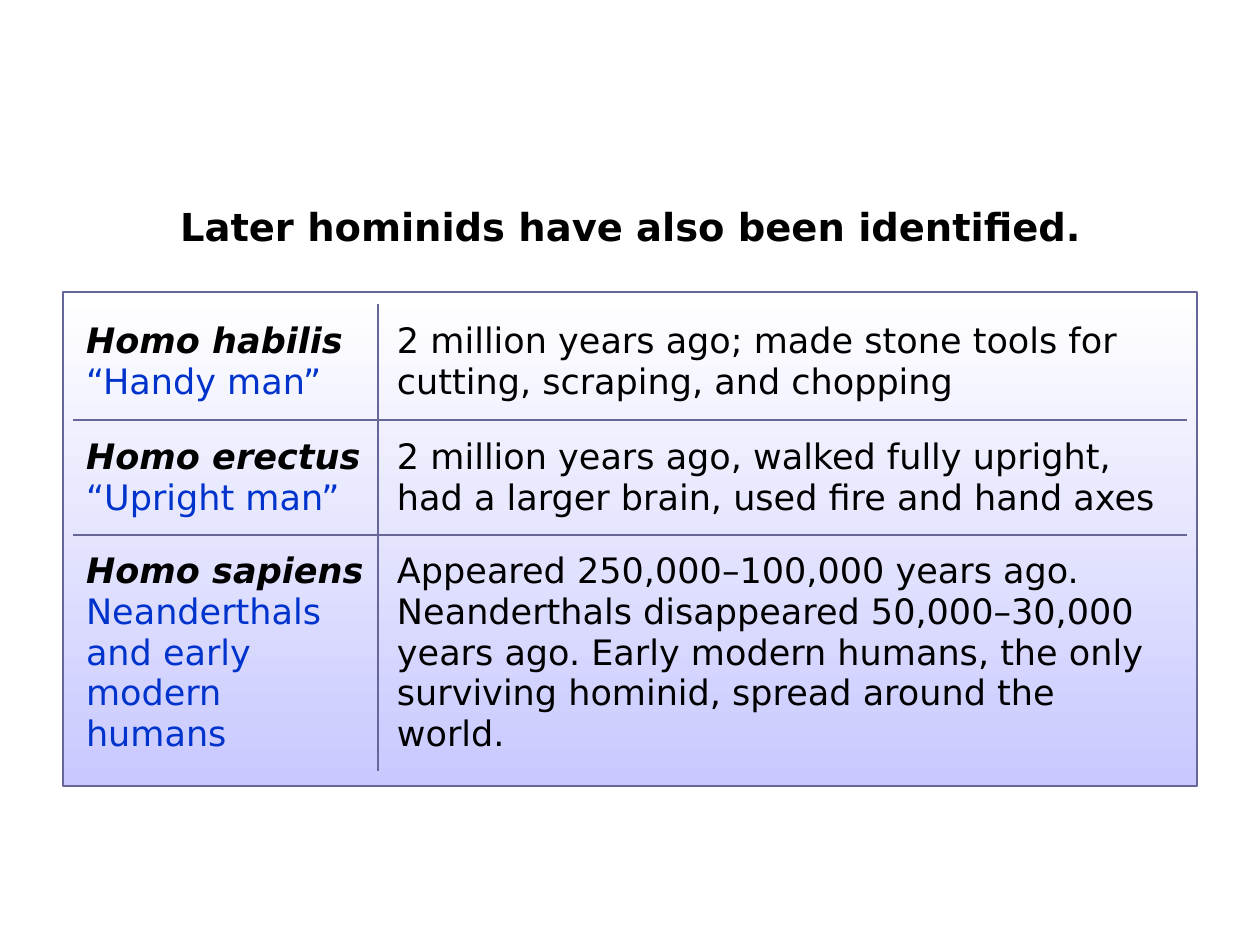
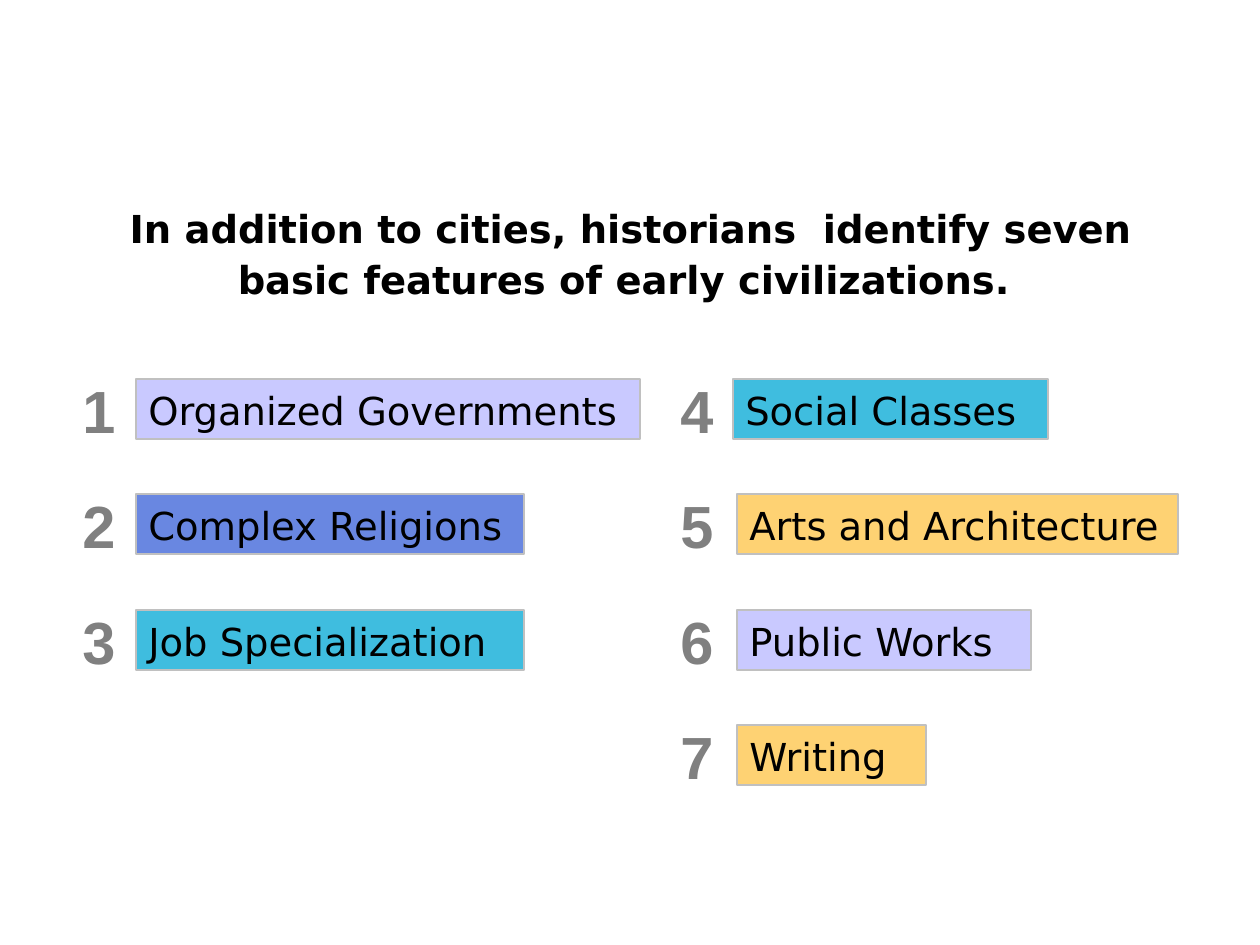
import pptx
import pptx.util
import pptx.dml.color
import pptx.enum.shapes
import pptx.enum.text
import pptx.oxml
import pptx.oxml.ns

SANS, ARIAL = "DejaVu Sans", "Arial"
BLACK, WHITE, GREY, SILVER = "000000", "FFFFFF", "808080", "C0C0C0"
BLUE, SLATE, LILAC = "0033CC", "666699", "C9C9FF"
AQUA, GOLD = "3FBDDF", "FED273"
ANCHOR = pptx.enum.text.MSO_ANCHOR
ALIGN = pptx.enum.text.PP_ALIGN
RECT = pptx.enum.shapes.MSO_SHAPE.RECTANGLE

KINDS = [
    ("Homo habilis", "“Handy man”",
     "2 million years ago; made stone tools for cutting, scraping, and chopping"),
    ("Homo erectus", "“Upright man”",
     "2 million years ago, walked fully upright, had a larger brain, "
     "used fire and hand axes"),
    ("Homo sapiens", "Neanderthals \vand early modern \vhumans",
     "Appeared 250,000–100,000 years ago. Neanderthals disappeared "
     "50,000–30,000 years ago. Early modern humans, the only surviving "
     "hominid, spread around the world."),
]
TRAITS = [
    (70, [("Organized Governments", 136, 504, LILAC, None),
          ("Complex Religions", 136, 388, BLUE, 59),
          ("Job Specialization", 136, 388, AQUA, None)]),
    (668, [("Social Classes", 733, 315, AQUA, None),
           ("Arts and Architecture", 737, 441, GOLD, None),
           ("Public Works", 737, 294, LILAC, None),
           ("Writing", 737, 189, GOLD, None)]),
]


def px(count):
    """Turn pixels at 126 to the inch into EMU."""
    return pptx.util.Emu(round(count * 914400 / 126))


def tint(code):
    """Turn a hex string into a colour."""
    return pptx.dml.color.RGBColor.from_string(code)


def style(para, size, color=BLACK, face=SANS, bold=False, slant=False):
    """Set the font of a paragraph."""
    font = para.font
    font.name, font.size = face, pptx.util.Pt(size)
    font.bold, font.italic = bold, slant
    font.color.rgb = tint(color)


def title(slide, text, top, height, space=None):
    """Fill and place the title."""
    shape = slide.shapes.title
    shape.left, shape.top = px(116), px(top)
    shape.width, shape.height = px(1029), px(height)
    frame = shape.text_frame
    frame.text = text
    frame.auto_size = pptx.enum.text.MSO_AUTO_SIZE.NONE
    frame.vertical_anchor = ANCHOR.MIDDLE
    para = frame.paragraphs[0]
    para.alignment = ALIGN.CENTER
    para.line_spacing = space
    style(para, 22, bold=True)


def box(shapes, left, top, width, height, line, weight):
    """Add a flat outlined rectangle."""
    shape = shapes.add_shape(RECT, px(left), px(top), px(width), px(height))
    shape.shadow.inherit = False
    shape.line.color.rgb = tint(line)
    shape.line.width = pptx.util.Pt(weight)
    return shape


def panel(slide):
    """Add the shaded panel behind the table."""
    fill = box(slide.shapes, 63, 292, 1134, 494, SLATE, 1.5).fill
    fill.gradient()
    fill.gradient_angle = 270
    for stop, code, place in zip(fill.gradient_stops, (WHITE, LILAC), (0, 1)):
        stop.color.rgb = tint(code)
        stop.position = place


def write(shape, text, size, color=BLACK, face=SANS, bold=False):
    """Write one left-aligned line in a shape."""
    frame = shape.text_frame
    frame.text = text
    frame.word_wrap = True
    frame.vertical_anchor = ANCHOR.BOTTOM
    para = frame.paragraphs[0]
    para.alignment = ALIGN.LEFT
    style(para, size, color, face, bold)


def fade(shape, share):
    """Make a solid fill partly clear."""
    color = shape.fill._xPr.find(".//" + pptx.oxml.ns.qn("a:srgbClr"))
    alpha = pptx.oxml.parse_xml(
        f'<a:alpha {pptx.oxml.ns.nsdecls("a")} val="{share * 1000}"/>')
    color.append(alpha)


def trait(slide, number, edge, top, text, left, width, color, share):
    """Add a numbered label as a group."""
    shapes = slide.shapes.add_group_shape().shapes
    label = box(shapes, left, top, width, 60, SILVER, 0.75)
    label.fill.solid()
    label.fill.fore_color.rgb = tint(color)
    if share:
        fade(label, share)
    write(label, text, 22)
    digit = shapes.add_textbox(px(edge), px(top - 11), px(63), px(84))
    write(digit, str(number), 34, GREY, ARIAL, True)


def rule(cell, sides):
    """Draw the named sides of a cell and hide the others."""
    space = pptx.oxml.ns.nsdecls("a")
    solid = f'<a:solidFill><a:srgbClr val="{SLATE}"/></a:solidFill>'
    props = cell._tc.get_or_add_tcPr()
    for side in "LRTB":
        fill = solid if side in sides else "<a:noFill/>"
        props.append(pptx.oxml.parse_xml(
            f'<a:ln{side} {space} w="12700">{fill}</a:ln{side}>'))


def fill_cell(cell, lines, inset, sides):
    """Write styled lines in a clear cell with ruled sides."""
    rule(cell, sides)
    cell.fill.background()
    cell.vertical_anchor = ANCHOR.MIDDLE
    cell.margin_left = px(inset)
    cell.margin_right = cell.margin_top = cell.margin_bottom = px(13)
    cell.text = "\n".join(text for text, _ in lines)
    for para, (_, look) in zip(cell.text_frame.paragraphs, lines):
        style(para, 20, **look)


def grid(slide):
    """Add the table of hominids."""
    wide, high = (305, 809), (116, 115, 236)
    table = slide.shapes.add_table(
        len(high), len(wide), px(73), px(304), px(sum(wide)), px(sum(high))).table
    table.first_row = table.horz_banding = False
    for col, width in zip(table.columns, wide):
        col.width = px(width)
    for row, height in zip(table.rows, high):
        row.height = px(height)
    for i, (name, alias, facts) in enumerate(KINDS):
        sides = ("T" if i else "") + ("B" if i < len(KINDS) - 1 else "")
        names = [(name, {"bold": True, "slant": True}), (alias, {"color": BLUE})]
        fill_cell(table.cell(i, 0), names, 13, sides + "R")
        fill_cell(table.cell(i, 1), [(facts, {})], 19, sides + "L")


def main():
    """Build both slides and save them."""
    deck = pptx.Presentation()
    deck.slide_width, deck.slide_height = px(1260), px(945)
    plain = deck.slide_layouts[5]

    slide = deck.slides.add_slide(plain)
    title(slide, "Later hominids have also been identified.", 197, 59)
    panel(slide)
    grid(slide)

    slide = deck.slides.add_slide(plain)
    title(slide, "In addition to cities, historians  identify seven "
          "basic features of early civilizations. ", 194, 115, 1.1)
    number = 0
    for edge, items in TRAITS:
        for i, item in enumerate(items):
            number += 1
            trait(slide, number, edge, 379 + i * 231 // 2, *item)

    deck.save("out.pptx")


if __name__ == "__main__":
    main()
